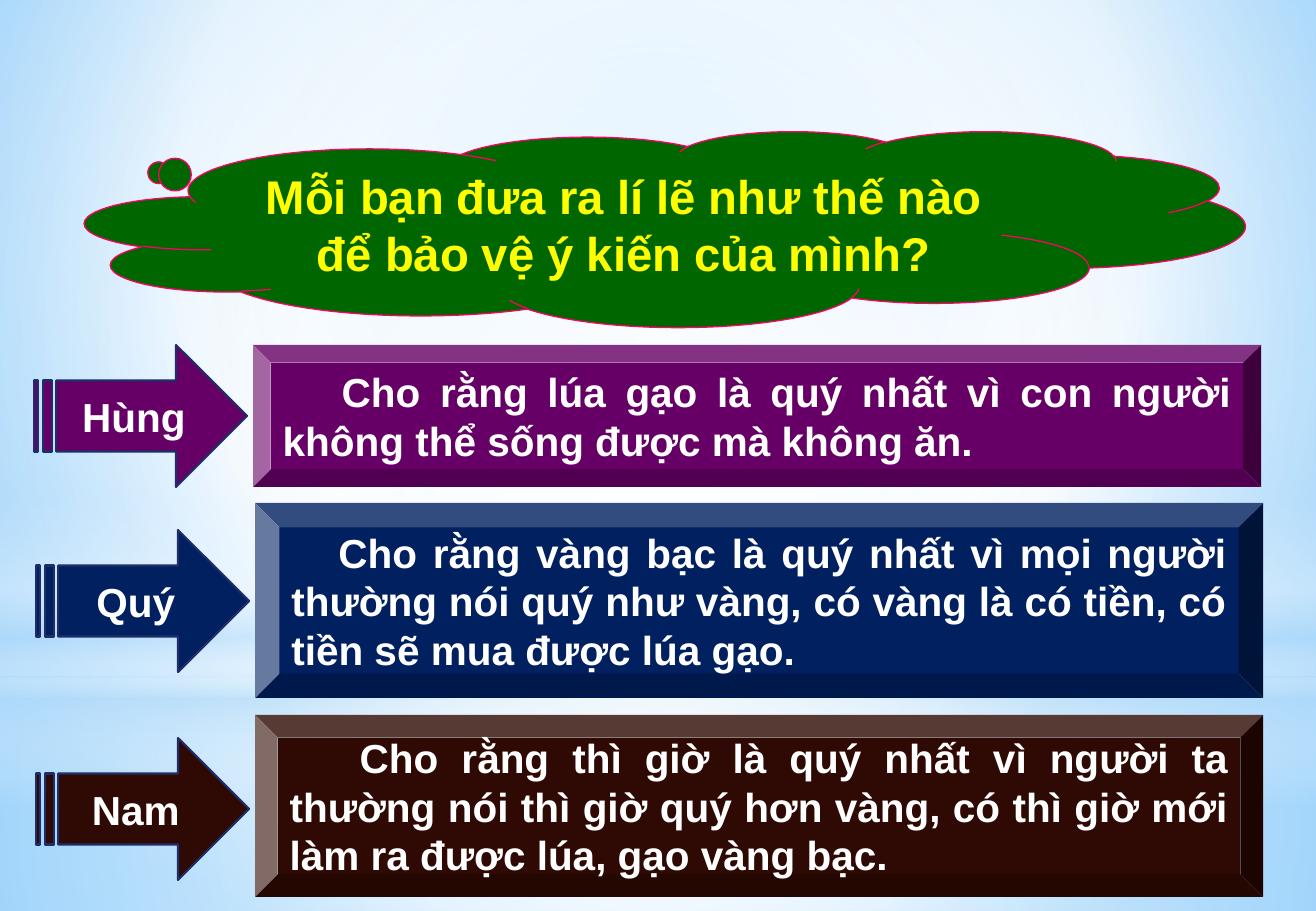
from lxml import etree
from pptx import Presentation
from pptx.dml.color import RGBColor
from pptx.enum import shapes, text
from pptx.oxml import ns
from pptx import util as u

SCALE = 914400 / 121.5
WIDTH, HEIGHT = 1316, 911
KIND = shapes.MSO_SHAPE
ALIGN = text.PP_ALIGN
CENTRE = (50, 50, 50, 50)


def px(n):
    return u.Emu(round(n * SCALE))


def colour(value):
    return RGBColor.from_string(value)


class Deck:
    font = "Arial"
    text_colour = "FFFFFF"

    def __init__(self):
        self.prs = Presentation()
        self.prs.slide_width, self.prs.slide_height = px(WIDTH), px(HEIGHT)
        self.slide = self.prs.slides.add_slide(self.prs.slide_layouts[6])

    def gradient(self, fill, owner, stops, focus=None):
        """Stops are (position, colour, opacity); focus makes it circular."""
        fill.gradient()
        grad = owner.find(".//" + ns.qn("a:gradFill"))
        for child in list(grad):
            grad.remove(child)
        stop_list = etree.SubElement(grad, ns.qn("a:gsLst"))
        for position, value, opacity in stops:
            stop = etree.SubElement(stop_list, ns.qn("a:gs"), pos=str(position * 1000))
            shade = etree.SubElement(stop, ns.qn("a:srgbClr"), val=value)
            if opacity < 100:
                etree.SubElement(shade, ns.qn("a:alpha"), val=str(opacity * 1000))
        if focus:
            circle = etree.SubElement(grad, ns.qn("a:path"))
            circle.set("path", "circle")
            sides = {side: str(n * 1000) for side, n in zip("ltrb", focus)}
            etree.SubElement(circle, ns.qn("a:fillToRect"), **sides)
        else:
            etree.SubElement(grad, ns.qn("a:lin"), ang="5400000", scaled="0")

    def background(self, stops, focus):
        self.gradient(self.slide.background.fill, self.slide.element, stops, focus)

    def shape(self, kind, box, fill=None, line=None, line_width=1):
        item = self.slide.shapes.add_shape(kind, *map(px, box))
        item.shadow.inherit = False
        if fill:
            item.fill.solid()
            item.fill.fore_color.rgb = colour(fill)
        if line:
            item.line.color.rgb = colour(line)
            item.line.width = u.Pt(line_width)
        else:
            item.line.fill.background()
        return item

    def glow(self, kind, top, height, stops, focus=None):
        item = self.shape(kind, (0, top, WIDTH, height))
        self.gradient(item.fill, item.element, stops, focus)

    def label(self, item, words, size, align, value=text_colour,
              anchor=text.MSO_ANCHOR.MIDDLE, indent=0):
        frame = item.text_frame
        frame.word_wrap = True
        frame.vertical_anchor = anchor
        frame.text = words
        paragraph = frame.paragraphs[0]
        paragraph.alignment = align
        if indent:
            paragraph._p.get_or_add_pPr().set("indent", str(px(indent)))
        font = paragraph.runs[0].font
        font.name, font.size, font.bold = self.font, u.Pt(size), True
        font.color.rgb = colour(value)
        return frame

    def question(self, box, words):
        cloud = self.shape(KIND.CLOUD_CALLOUT, box, "006600", "FF0066", 0.75)
        cloud.adjustments[0], cloud.adjustments[1] = -0.441, -0.29
        frame = self.label(cloud, words, 28, ALIGN.CENTER, "FFFF00",
                           text.MSO_ANCHOR.TOP)
        frame.margin_left = frame.margin_right = px(15)
        frame.margin_top = frame.margin_bottom = px(7)

    def name_arrow(self, left, top, name, fill):
        arrow = self.shape(KIND.STRIPED_RIGHT_ARROW, (left, top, 213, 142),
                           fill, "1F2E69", 1.25)
        self.label(arrow, name, 24, ALIGN.CENTER)

    def reason(self, left, top, height, words, fill, indent):
        panel = self.shape(KIND.BEVEL, (left, top, 1008, height), fill)
        self.label(panel, words, 24, ALIGN.JUSTIFY, indent=indent)


def main():
    deck = Deck()

    # Sky background with soft light
    deck.background([(0, "9ED5FF", 100), (60, "FFFFFF", 100), (100, "5BB9FF", 100)],
                    (20, 10, 20, 60))
    deck.glow(KIND.RECTANGLE, 678, 233,
              [(0, "FFFFFF", 91), (37, "FFFFFF", 76), (100, "B4DCFA", 79)], CENTRE)
    deck.glow(KIND.RECTANGLE, 0, 678,
              [(0, "FFFFFF", 89), (48, "FFFFFF", 62), (100, "B4DCFA", 79)], CENTRE)
    deck.glow(KIND.RECTANGLE, 501, 304,
              [(0, "FFFFFF", 0), (29, "FFFFFF", 30), (45, "B4DCFA", 40),
               (55, "FFFFFF", 26), (65, "B4DCFA", 60), (100, "FFFFFF", 0)])
    deck.glow(KIND.OVAL, 213, 678, [(0, "FFFFFF", 100), (56, "FFFFFF", 0)], CENTRE)

    # Question
    deck.question((85, 131, 1160, 196),
                  "Mỗi bạn đưa ra lí lẽ như thế nào để bảo vệ ý kiến của mình?")

    # Each friend's reason: name, colour, left, arrow top, panel top, height, indent
    friends = [
        ("Hùng", "660066", 34, 345, 345, 142, 59,
         "Cho rằng lúa gạo là quý nhất vì con người không thể sống được "
         "mà không ăn."),
        ("Quý", "002060", 36, 530, 503, 195, 47,
         "Cho rằng vàng bạc là quý nhất vì mọi người thường nói quý như vàng, "
         "có vàng là có tiền, có tiền sẽ mua được lúa gạo."),
        ("Nam", "2F0903", 36, 738, 715, 182, 70,
         "Cho rằng thì giờ là quý nhất vì người ta thường nói thì giờ quý hơn vàng, "
         "có thì giờ mới làm ra được lúa, gạo vàng bạc."),
    ]
    for name, fill, left, arrow_top, panel_top, height, indent, words in friends:
        deck.name_arrow(left, arrow_top, name, fill)
        deck.reason(left + 219, panel_top, height, words, fill, indent)

    deck.prs.save("out.pptx")


if __name__ == "__main__":
    main()
